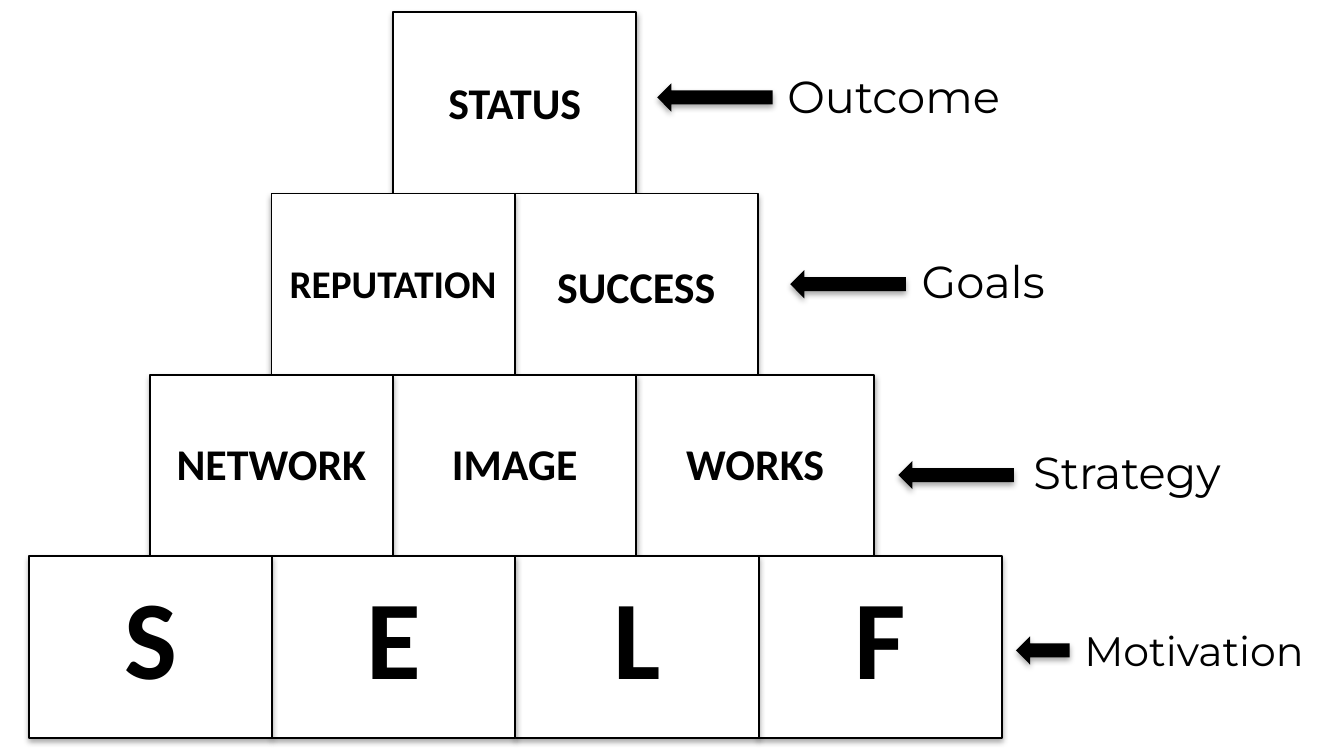
from pptx import Presentation
from pptx.dml.color import RGBColor
from pptx.enum.shapes import MSO_SHAPE
from pptx.enum.text import MSO_AUTO_SIZE, PP_ALIGN
from pptx.util import Pt

PX = 4572  # 200 px to the inch
BOX_W, BOX_H = 362, 270
BLACK, WHITE = "000000", "FFFFFF"

prs = Presentation()
prs.slide_width, prs.slide_height = 2000 * PX, 1125 * PX
s = prs.slides.add_slide(prs.slide_layouts[6])


def add_block(shape, x, y, w, h, fill):
    """Add a filled shape that keeps the soft shadow of the theme."""
    sp = s.shapes.add_shape(shape, x * PX, y * PX, w * PX, h * PX)
    sp.fill.solid()
    sp.fill.fore_color.rgb = RGBColor.from_string(fill)
    sp.line.fill.background()
    return sp


def add_label(text, x, y, w, h, align, **font):
    tf = s.shapes.add_textbox(x * PX, y * PX, w * PX, h * PX).text_frame
    tf.word_wrap = True
    tf.auto_size = MSO_AUTO_SIZE.SHAPE_TO_FIT_TEXT
    p = tf.paragraphs[0]
    p.alignment = align
    r = p.add_run()
    r.text = text
    r.font.color.rgb = RGBColor.from_string(BLACK)
    for name, value in font.items():
        setattr(r.font, name, value)


# Pyramid rows: left edge, label top, label height, font size, words
rows = [
    (585, 103, 100, 23.5, ["STATUS"]),
    (404, 376, 100, 23.5, ["REPUTATION", "SUCCESS"]),
    (223, 640, 100, 23.5, ["NETWORK", "IMAGE", "WORKS"]),
    (43, 834, 222, 60, ["S", "E", "L", "F"]),
]
for i, (left, label_y, label_h, size, words) in enumerate(rows):
    # Right to left, so that IMAGE covers the edge of WORKS
    for j, word in reversed(list(enumerate(words))):
        x = left + j * BOX_W
        box_x, label_w = (x - 8, BOX_W - 8) if word == "WORKS" else (x, BOX_W)
        sp = add_block(MSO_SHAPE.RECTANGLE, box_x, 18 + i * BOX_H, BOX_W, BOX_H, WHITE)
        sp.line.color.rgb = RGBColor.from_string(BLACK)
        sp.line.width = Pt(1)
        word_size, word_h = (21, 90) if word == "REPUTATION" else (size, label_h)
        add_label(word, x, label_y, label_w, word_h, PP_ALIGN.CENTER,
                  name="Calibri", size=Pt(word_size), bold=True)

# Level names: arrow left, top and width, then text left, top, height and size
levels = [
    ("Outcome", 978, 124, 172, 1152, 92, 100, 24),
    ("Goals", 1176, 402, 172, 1352, 368, 100, 24),
    ("Strategy", 1337, 686, 172, 1518, 652, 100, 24),
    ("Motivation", 1512, 947, 80, 1594, 921, 94, 22),
]
for text, arrow_x, arrow_y, arrow_w, x, y, h, size in levels:
    add_block(MSO_SHAPE.LEFT_ARROW, arrow_x, arrow_y, arrow_w, 42, BLACK)
    add_label(text, x, y, 406, h, PP_ALIGN.LEFT, name="Montserrat", size=Pt(size))

prs.save("out.pptx")
